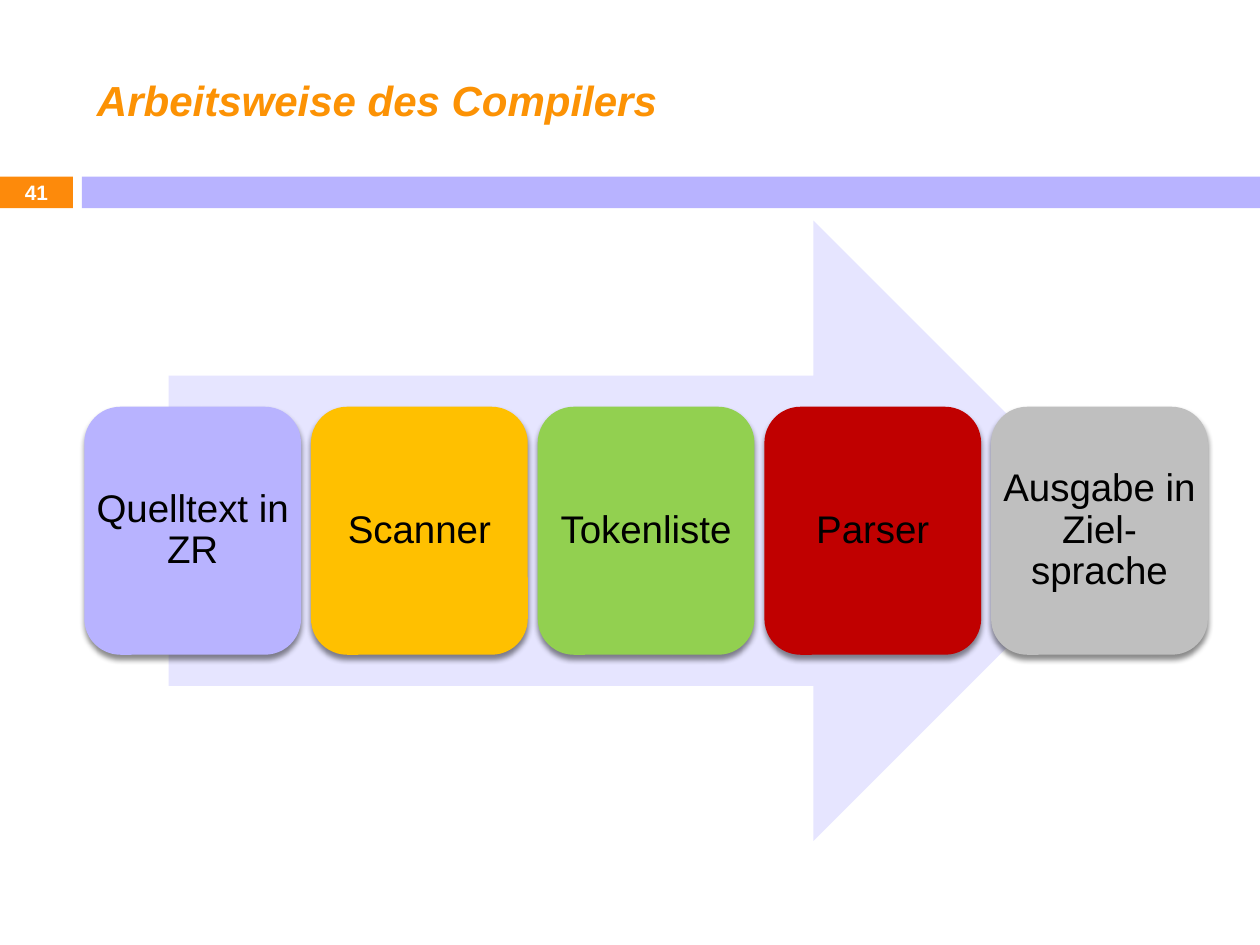
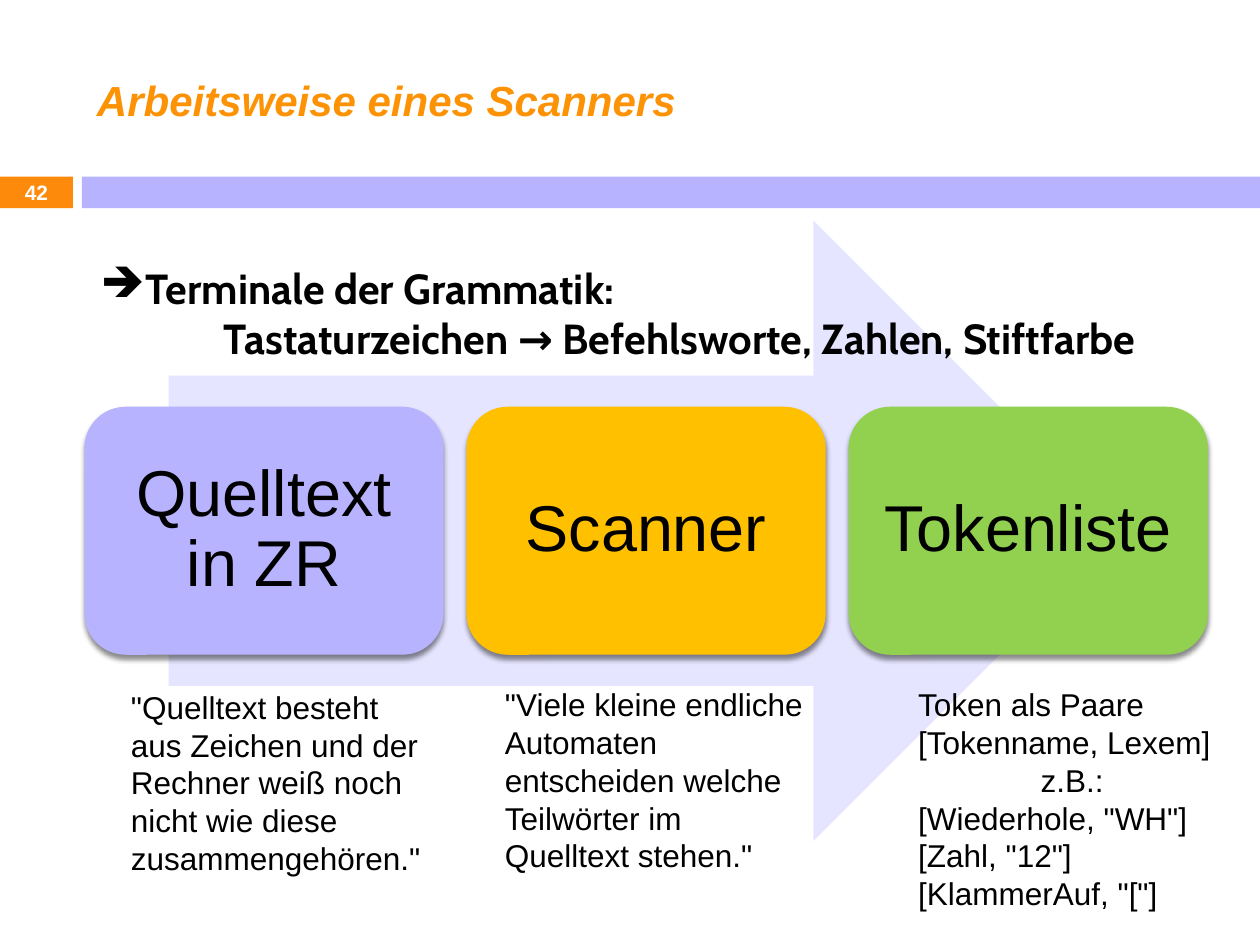
from pptx import Presentation
from pptx.dml import color
from pptx.enum import shapes, text
from pptx.oxml import parse_xml
from pptx.oxml.ns import nsdecls
from pptx.util import Cm, Pt

# Shared colours and shape kinds
rgb = color.RGBColor.from_string
ORANGE, LILAC, PALE = "FD8A0B", "B8B3FF", "E6E5FF"
GOLD, GREEN, RED, GREY = "FFC000", "92D050", "C00000", "BFBFBF"
KIND = shapes.MSO_SHAPE
LEFT, MID = text.PP_ALIGN.LEFT, text.PP_ALIGN.CENTER
SHADOW = (
    f'<a:effectLst {nsdecls("a")}><a:outerShdw blurRad="38100" dist="30000" '
    'dir="5400000" rotWithShape="0"><a:srgbClr val="000000">'
    '<a:alpha val="45000"/></a:srgbClr></a:outerShdw></a:effectLst>'
)


def block(slide, kind, area, fill):
    """Add a plain filled shape without outline; area is in cm."""
    shape = slide.shapes.add_shape(kind, *map(Cm, area))
    shape.shadow.inherit = False
    shape.fill.solid()
    shape.fill.fore_color.rgb = rgb(fill)
    shape.line.fill.background()
    return shape


def put(frame, lines, size, tint="000000", align=LEFT, face="Arial",
        bold=False, slant=False, inset=None):
    """Write one paragraph per line, with the same look."""
    frame.word_wrap = True
    if inset is not None:
        frame.margin_left = frame.margin_right = Cm(inset)
        frame.margin_top = frame.margin_bottom = Cm(inset)
    for i, line in enumerate(lines):
        par = frame.add_paragraph() if i else frame.paragraphs[0]
        par.alignment = align
        run = par.add_run()
        run.text = line
        font = run.font
        font.name, font.size = face, Pt(size)
        font.bold, font.italic = bold, slant
        font.color.rgb = rgb(tint)
    return frame.paragraphs


deck = Presentation()
deck.slide_width, deck.slide_height = Cm(25.4), Cm(19.05)

# Per slide: title, box text size, inset, gap, boxes
stages = [("Quelltext in ZR", LILAC), ("Scanner", GOLD), ("Tokenliste", GREEN),
          ("Parser", RED), ("Ausgabe in Ziel-sprache", GREY)]
pages = [
    ("Arbeitsweise des Compilers", 22, 0, 0.2, stages),
    ("Arbeitsweise eines Scanners", 37, 0.18, 0.46, stages[:3]),
]

for num, (head, size, inset, gap, boxes) in enumerate(pages, 41):
    slide = deck.slides.add_slide(deck.slide_layouts[5])

    # Title
    title = slide.shapes.title
    title.left, title.top = Cm(1.7), Cm(0.64)
    title.width, title.height = Cm(22.66), Cm(2.74)
    title.text_frame.vertical_anchor = text.MSO_ANCHOR.MIDDLE
    put(title.text_frame, [head], 24, "FC9204", bold=True, slant=True)

    # Page number and band
    badge = block(slide, KIND.RECTANGLE, (0, 3.56, 1.47, 0.64), ORANGE)
    put(badge.text_frame, [str(num)], 11.9, "FFFFFF", MID, bold=True, inset=0)
    block(slide, KIND.RECTANGLE, (1.65, 3.56, 23.75, 0.64), LILAC)

    # Process arrow with its boxes
    block(slide, KIND.RIGHT_ARROW, (3.4, 4.45, 19.25, 12.5), PALE)
    width = (22.65 - gap * (len(boxes) - 1)) / len(boxes)
    for i, (label, fill) in enumerate(boxes):
        area = (1.7 + i * (width + gap), 8.2, width, 5)
        box = block(slide, KIND.ROUNDED_RECTANGLE, area, fill)
        props = box._element.spPr
        props.replace(props.find("{*}effectLst"), parse_xml(SHADOW))
        put(box.text_frame, [label], size, align=MID, inset=inset)
        box.text_frame.paragraphs[0].line_spacing = 0.9

# Grammar line above the boxes of the scanner slide
area = slide.shapes.add_textbox(Cm(1.78), Cm(5.16), Cm(22.02), Cm(2.31))
first, second = put(area.text_frame, [
    "Terminale der Grammatik:",
    "Tastaturzeichen → Befehlsworte, Zahlen, Stiftfarbe",
], 24, face="Cabin", bold=True)
props = first._p.get_or_add_pPr()
props.set("marL", str(Cm(0.73)))
props.set("indent", str(-Cm(0.73)))
props.append(parse_xml(f'<a:buChar {nsdecls("a")} char="➔"/>'))
second._p.get_or_add_pPr().set("marL", str(Cm(2.48)))

# Notes below the boxes
notes = [
    (2.39, 13.74, ['"Quelltext besteht aus Zeichen und der Rechner weiß noch '
                   'nicht wie diese zusammengehören."']),
    (9.93, 13.69, ['"Viele kleine endliche Automaten entscheiden welche '
                   'Teilwörter im Quelltext stehen."']),
    (18.26, 13.69, ["Token als Paare", "[Tokenname, Lexem]", "z.B.:",
                    '[Wiederhole, "WH"]', '[Zahl, "12"]',
                    '[KlammerAuf, "["]']),
]
for left, top, lines in notes:
    note = slide.shapes.add_textbox(Cm(left), Cm(top), Cm(6.55), Cm(4.11))
    pars = put(note.text_frame, lines, 18)
pars[2]._p.get_or_add_pPr().set("marL", str(Cm(2.47)))

deck.save("out.pptx")
